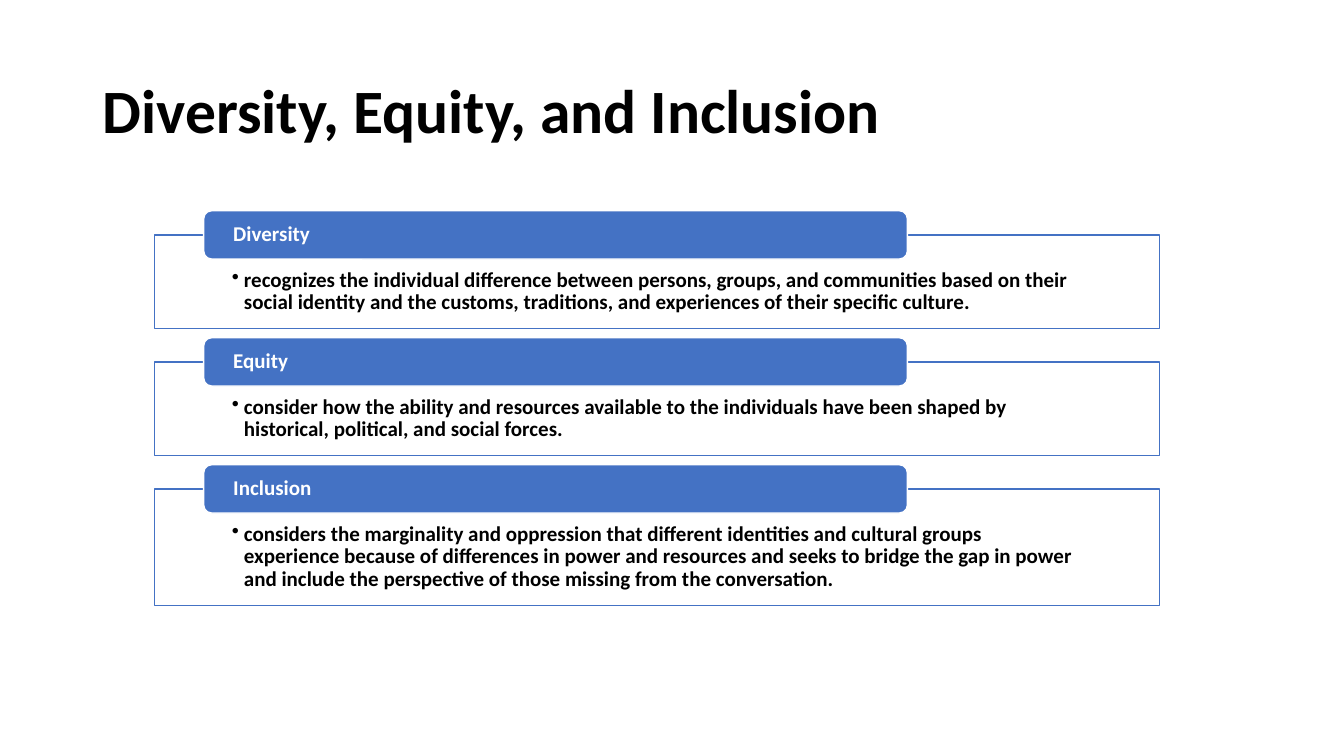
from lxml import etree
from pptx import Presentation
from pptx.dml.color import RGBColor
from pptx.enum.shapes import MSO_SHAPE
from pptx.enum.text import MSO_ANCHOR, PP_ALIGN
from pptx.oxml.ns import qn
from pptx.util import Inches, Pt

RECT = MSO_SHAPE.RECTANGLE
ROUND = MSO_SHAPE.ROUNDED_RECTANGLE
TOP = MSO_ANCHOR.TOP
MIDDLE = MSO_ANCHOR.MIDDLE
LEFT = PP_ALIGN.LEFT

COLORS = {"blue": "4472C4", "white": "FFFFFF", "black": "000000"}
TERMS = [
    ("Diversity", 0.93,
     "recognizes the individual difference between persons, groups, and communities "
     "based on their social identity and the customs, traditions, and experiences of "
     "their specific culture."),
    ("Equity", 0.93,
     "consider how the ability and resources available to the individuals have been "
     "shaped by historical, political, and social forces."),
    ("Inclusion", 1.16,
     "considers the marginality and oppression that different identities and cultural "
     "groups experience because of differences in power and resources and seeks to "
     "bridge the gap in power and include the perspective of those missing from the "
     "conversation."),
]


def write(shape, text, size, color, anchor, insets):
    frame = shape.text_frame
    frame.word_wrap = True
    frame.vertical_anchor = anchor
    left, top, right, bottom = [Inches(n) for n in insets]
    frame.margin_left, frame.margin_right = left, right
    frame.margin_top, frame.margin_bottom = top, bottom
    para = frame.paragraphs[0]
    para.text = text
    para.alignment = LEFT
    para.line_spacing = 0.9
    font = para.runs[0].font
    font.name = "Calibri"
    font.size = Pt(size)
    font.bold = True
    font.color.rgb = RGBColor.from_string(COLORS[color])
    return para


def panel(kind, left, top, width, height, fill, line):
    shape = slide.shapes.add_shape(
        kind, Inches(left), Inches(top), Inches(width), Inches(height))
    shape.shadow.inherit = False
    shape.fill.solid()
    shape.fill.fore_color.rgb = RGBColor.from_string(COLORS[fill])
    shape.line.color.rgb = RGBColor.from_string(COLORS[line])
    shape.line.width = Pt(1)
    return shape


deck = Presentation()
deck.slide_width = Inches(13.33)
deck.slide_height = Inches(7.5)
slide = deck.slides.add_slide(deck.slide_layouts[6])

title = slide.shapes.add_textbox(Inches(0.92), Inches(0.4), Inches(11.5), Inches(1.45))
write(title, "Diversity, Equity, and Inclusion", 44, "black", MIDDLE, (0.1, 0.05, 0.1, 0.05))

top = 2.33
for term, height, detail in TERMS:
    box = panel(RECT, 1.53, top, 9.97, height, "white", "blue")
    para = write(box, detail, 15, "black", TOP, (0.77, 0.34, 0.77, 0.12))
    props = para._p.get_or_add_pPr()
    props.set("marL", str(Inches(0.12)))
    props.set("indent", str(-Inches(0.12)))
    etree.SubElement(props, qn("a:buChar")).set("char", "•")

    tab = panel(ROUND, 2.02, top - 0.24, 6.98, 0.48, "blue", "white")
    write(tab, term, 15, "white", MIDDLE, (0.27, 0, 0.27, 0))
    top += height + 0.33

deck.save("out.pptx")
